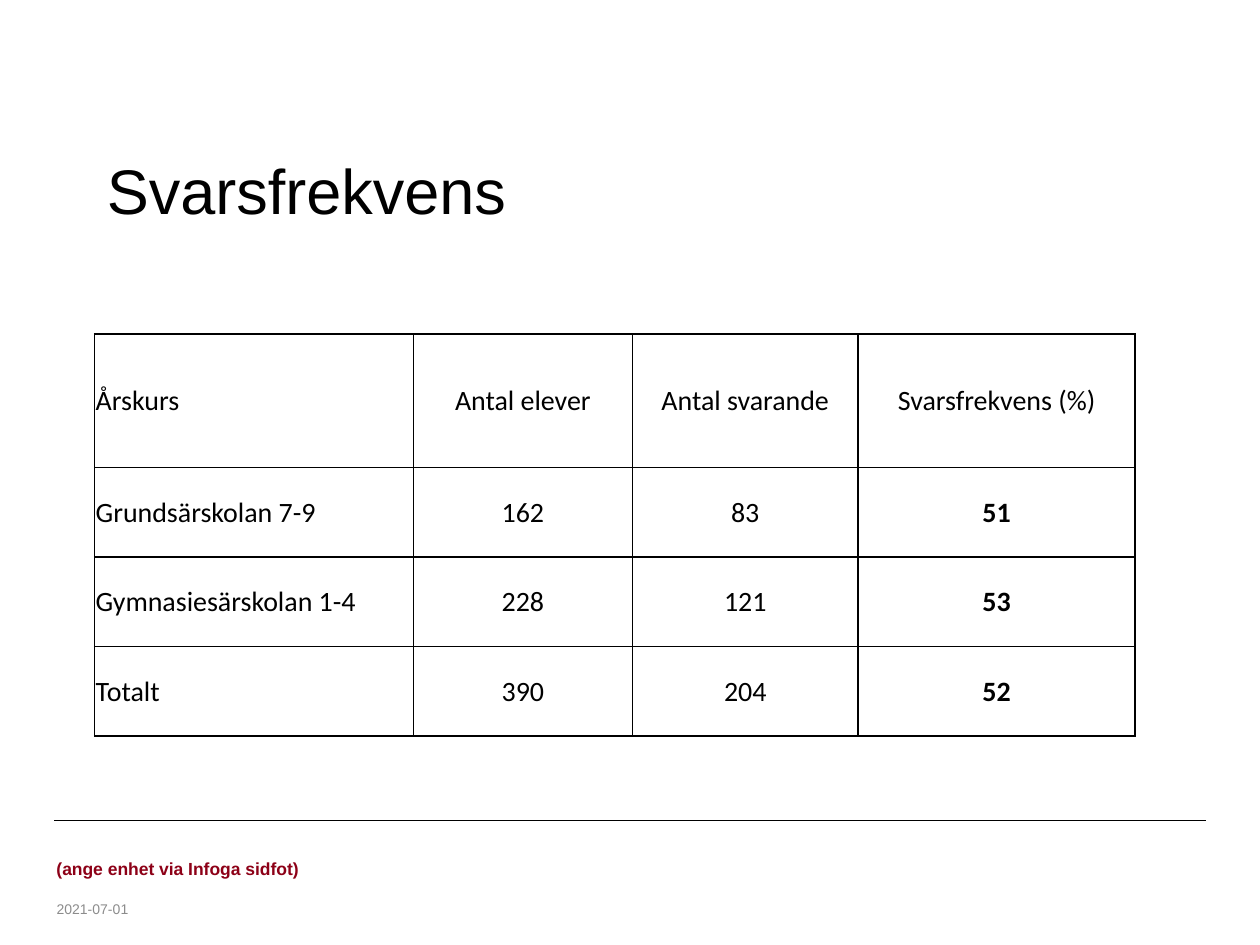
from lxml.etree import SubElement
from pptx import Presentation
from pptx.dml.color import RGBColor
from pptx.enum.shapes import MSO_CONNECTOR
from pptx.enum.text import MSO_ANCHOR, PP_ALIGN
from pptx.oxml.ns import qn
from pptx.util import Inches, Pt


def rgb(value):
    return RGBColor.from_string(value)


class Deck:
    black = "000000"
    grey = "8C8C8C"
    red = "8D0017"
    body = "Arial"
    table_font = "Calibri"

    def __init__(self, width, height):
        self.prs = Presentation()
        self.prs.slide_width = Inches(width)
        self.prs.slide_height = Inches(height)
        self.s = self.prs.slides.add_slide(self.prs.slide_layouts[6])

    def run(self, p, text, size, font, color, bold=False):
        r = p.add_run()
        r.text = text
        r.font.size = Pt(size)
        r.font.name = font
        r.font.bold = bold
        r.font.color.rgb = rgb(color)

    def text(self, box, text, size, color, bold=False):
        tf = self.s.shapes.add_textbox(*map(Inches, box)).text_frame
        tf.word_wrap = True
        tf.vertical_anchor = MSO_ANCHOR.MIDDLE
        self.run(tf.paragraphs[0], text, size, self.body, color, bold)

    def rule(self, left, right, y):
        line = self.s.shapes.add_connector(
            MSO_CONNECTOR.STRAIGHT, Inches(left), Inches(y), Inches(right), Inches(y))
        line.line.color.rgb = rgb(self.black)
        line.line.width = Pt(0.5)
        SubElement(line._element.spPr, qn("a:effectLst"))

    def border(self, cell):
        tc_pr = cell._tc.get_or_add_tcPr()
        for side in ("a:lnL", "a:lnR", "a:lnT", "a:lnB"):
            ln = SubElement(tc_pr, qn(side), w=str(Pt(1)))
            fill = SubElement(ln, qn("a:solidFill"))
            SubElement(fill, qn("a:srgbClr"), val=self.black)

    def table(self, left, top, widths, heights, rows):
        frame = self.s.shapes.add_table(
            len(rows), len(widths), Inches(left), Inches(top),
            Inches(sum(widths)), Inches(sum(heights)))
        table = frame.table
        table.first_row = table.horz_banding = False
        for column, width in zip(table.columns, widths):
            column.width = Inches(width)
        for row, height in zip(table.rows, heights):
            row.height = Inches(height)
        for i, values in enumerate(rows):
            for j, value in enumerate(values):
                cell = table.cell(i, j)
                cell.margin_left = cell.margin_right = cell.margin_top = Inches(0.01)
                cell.margin_bottom = 0
                cell.vertical_anchor = MSO_ANCHOR.MIDDLE
                self.border(cell)
                cell.fill.background()
                p = cell.text_frame.paragraphs[0]
                p.alignment = PP_ALIGN.CENTER if j else PP_ALIGN.LEFT
                bold = i > 0 and j == len(widths) - 1
                self.run(p, value, 16, self.table_font, self.black, bold)


def main():
    deck = Deck(10, 7.5)
    deck.rule(0.43, 9.57, 6.51)
    deck.text((0.75, 1.15, 7.95, 0.71), "Svarsfrekvens", 36, deck.black)
    deck.text((0.35, 7.09, 0.79, 0.24), "2021-07-01", 8, deck.grey)
    deck.text((0.35, 6.77, 5.67, 0.24), "(ange enhet via Infoga sidfot)", 10, deck.red, True)
    deck.table(0.75, 2.65, [2.53, 1.74, 1.79, 2.2], [1.06] + [0.71] * 3, [
        ["Årskurs", "Antal elever", "Antal svarande", "Svarsfrekvens (%)"],
        ["Grundsärskolan 7-9", "162", "83", "51"],
        ["Gymnasiesärskolan 1-4", "228", "121", "53"],
        ["Totalt", "390", "204", "52"],
    ])
    deck.prs.save("out.pptx")


if __name__ == "__main__":
    main()
